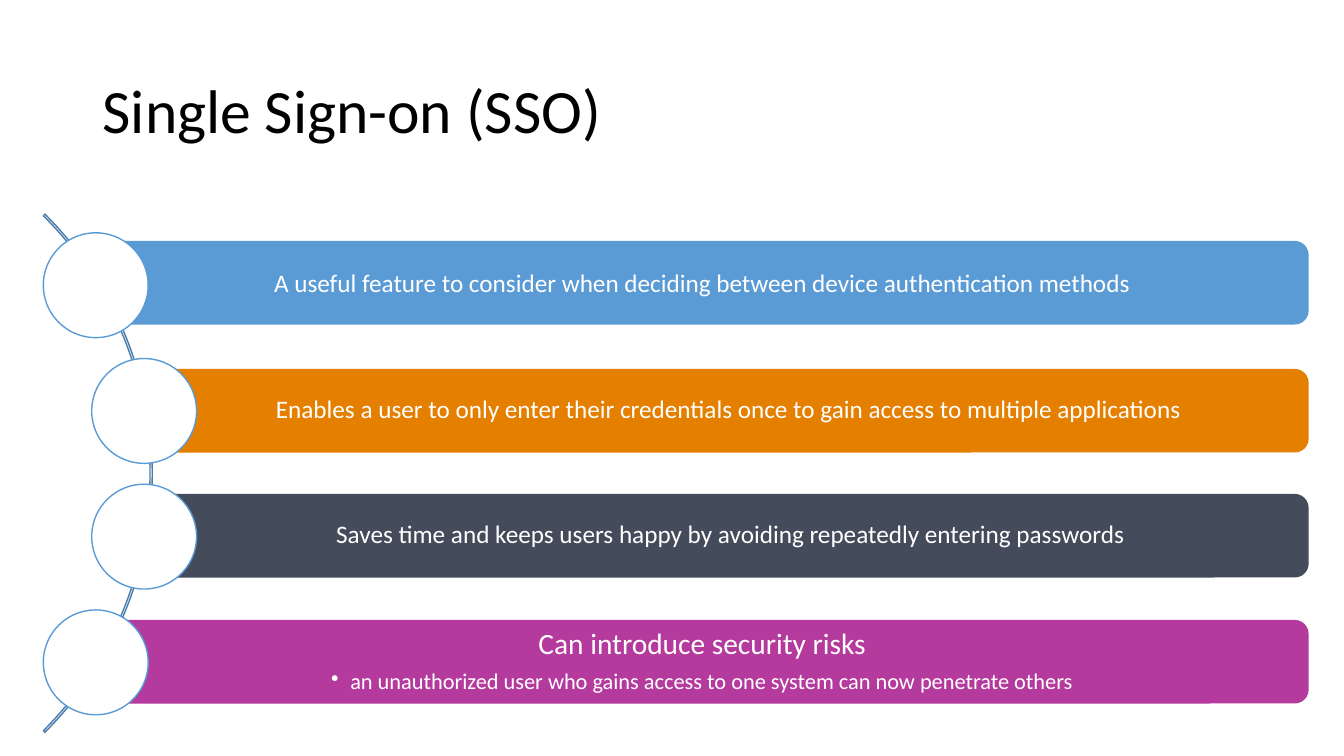
import pptx
import pptx.util
import pptx.dml.color
import pptx.enum.shapes
import pptx.enum.text
import lxml.etree

Inches, Pt = pptx.util.Inches, pptx.util.Pt
SHAPES = pptx.enum.shapes.MSO_SHAPE
ALIGN = pptx.enum.text.PP_ALIGN

# Content
TITLE = "Single Sign-on (SSO)"
COLORS = {
    "black": "000000", "white": "FFFFFF", "arc": "497CAB", "outline": "5B9BD5",
    "blue": "5B9BD5", "orange": "E57F00", "slate": "444B5A", "purple": "B43A9D",
}
# Each point: bar left, bar top, circle left, colour, text, size, line spacing, detail
POINTS = [
    (0.95, 2.39, 0.43, "blue",
     "A useful feature to consider when deciding between device authentication methods",
     18, 1.0, None),
    (1.47, 3.66, 0.91, "orange",
     "Enables a user to only enter their credentials once to gain access to multiple applications",
     18, 0.9, None),
    (1.51, 4.9, 0.91, "slate",
     "Saves time and keeps users happy by avoiding repeatedly entering passwords",
     18, 0.9, None),
    (0.95, 6.15, 0.43, "purple", "Can introduce security risks", 21, 0.9,
     "an unauthorized user who gains access to one system can now penetrate others"),
]

# Layout in inches
BAR_RIGHT, BAR_HEIGHT = 12.98, 0.83
CIRCLE_TOP, CIRCLE_STEP, CIRCLE_SIZE = 2.31, 1.247, 1.04
ARC_LEFT, ARC_TOP, ARC_SIZE = -5.76, 1.06, 7.27
BULLET_INDENT = 0.19


def rgb(name):
    return pptx.dml.color.RGBColor.from_string(COLORS[name])


def add_shape(kind, left, top, width, height, fill=None, line=None):
    shape = slide.shapes.add_shape(
        kind, Inches(left), Inches(top), Inches(width), Inches(height))
    shape.shadow.inherit = False
    if fill:
        shape.fill.solid()
        shape.fill.fore_color.rgb = rgb(fill)
    else:
        shape.fill.background()
    if line:
        shape.line.color.rgb = rgb(line)
        shape.line.width = Pt(1)
    else:
        shape.line.fill.background()
    return shape


def write(paragraph, text, size, color, alignment, spacing=0.9, after=0):
    paragraph.alignment = alignment
    paragraph.line_spacing = spacing
    paragraph.space_after = Pt(after)
    run = paragraph.add_run()
    run.text = text
    run.font.name = "Calibri"
    run.font.size = Pt(size)
    run.font.color.rgb = rgb(color)


def add_bullet(paragraph):
    paragraph.level = 1
    properties = paragraph._p.get_or_add_pPr()
    properties.set("marL", str(Inches(BULLET_INDENT)))
    properties.set("indent", str(-Inches(BULLET_INDENT)))
    bullet = lxml.etree.SubElement(properties, pptx.oxml.ns.qn("a:buChar"))
    bullet.set("char", "•")


presentation = pptx.Presentation()
presentation.slide_width = Inches(13.33)
presentation.slide_height = Inches(7.5)
slide = presentation.slides.add_slide(presentation.slide_layouts[6])

# Title
title = slide.shapes.add_textbox(Inches(0.92), Inches(0.4), Inches(11.5), Inches(1.45))
title.text_frame.word_wrap = True
title.text_frame.vertical_anchor = pptx.enum.text.MSO_ANCHOR.MIDDLE
write(title.text_frame.paragraphs[0], TITLE, 44, "black", ALIGN.LEFT)

# Bars with their text
for left, top, _, color, text, size, spacing, detail in POINTS:
    bar = add_shape(SHAPES.ROUNDED_RECTANGLE, left, top, BAR_RIGHT - left, BAR_HEIGHT, color)
    frame = bar.text_frame
    frame.word_wrap = True
    frame.vertical_anchor = pptx.enum.text.MSO_ANCHOR.MIDDLE
    after = 0.35 * size if spacing < 1 else 0
    write(frame.paragraphs[0], text, size, "white", ALIGN.CENTER, spacing, after)
    if detail:
        paragraph = frame.add_paragraph()
        write(paragraph, detail, 16, "white", ALIGN.CENTER, spacing, 0.15 * 16)
        add_bullet(paragraph)

# Thin arc behind the circles, from 315 to 45 degrees
arc = add_shape(SHAPES.BLOCK_ARC, ARC_LEFT, ARC_TOP, ARC_SIZE, ARC_SIZE, line="arc")
for index, value in enumerate((189, 27, 0.003)):
    arc.adjustments[index] = value

# Circles
for index, point in enumerate(POINTS):
    add_shape(SHAPES.OVAL, point[2], CIRCLE_TOP + index * CIRCLE_STEP,
              CIRCLE_SIZE, CIRCLE_SIZE, "white", "outline")

presentation.save("out.pptx")
